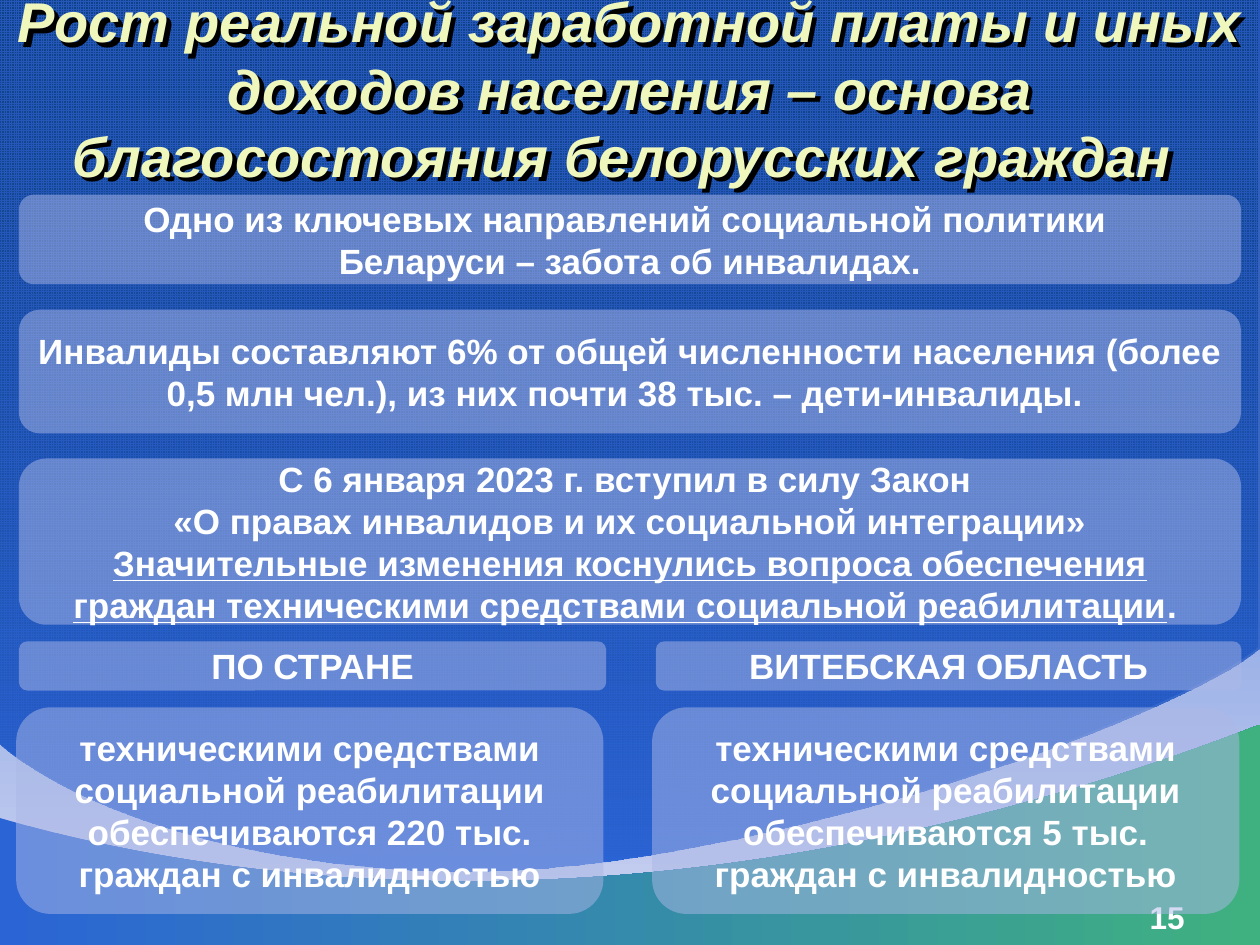
from dataclasses import dataclass

from lxml.etree import SubElement
from pptx import Presentation
from pptx.dml.color import RGBColor
from pptx.enum.dml import MSO_PATTERN
from pptx.enum.shapes import MSO_SHAPE
from pptx.enum.text import MSO_ANCHOR, MSO_AUTO_SIZE, PP_ALIGN
from pptx.oxml.ns import qn
from pptx.util import Pt


@dataclass(frozen=True)
class Theme:
    font: str = "Arial"
    title_size: float = 32
    text_size: float = 20
    number_size: float = 18
    white: str = "FFFFFF"
    title: str = "F0F7BD"
    panel: str = "ACB8E7"
    blue: str = "2B64D5"
    navy: str = "003D7B"
    deep: str = "1F4898"
    green: str = "3FB180"
    pale: str = "CED4F0"
    shadow: str = "000000"


@dataclass(frozen=True)
class Panel:
    left: float
    top: float
    width: float
    height: float
    paragraphs: tuple[str, ...]
    underlined: int | None = None


THEME = Theme()
WIDTH, HEIGHT = 720, 540
LEFT, FULL, HALF = 10.8, 698.4, 335.6
AIDS = ("техническими средствами социальной реабилитации "
        "обеспечиваются {} тыс. граждан с инвалидностью")
TITLE = ("Рост реальной заработной платы и иных доходов населения – основа "
         "благосостояния белорусских граждан ")
PANELS = [
    Panel(LEFT, 111.3, FULL, 51.1, (
        "Одно из ключевых направлений социальной политики \n"
        "Беларуси – забота об инвалидах.",)),
    Panel(LEFT, 177, FULL, 70.6, (
        "Инвалиды составляют 6% от общей численности населения (более "
        "0,5 млн чел.), из них почти 38 тыс. – дети-инвалиды. ",)),
    Panel(LEFT, 262, FULL, 95, (
        "С 6 января 2023 г. вступил в силу Закон \n"
        "«О правах инвалидов и их социальной интеграции»",
        "Значительные изменения коснулись вопроса обеспечения граждан "
        "техническими средствами социальной реабилитации. "), underlined=1),
    Panel(LEFT, 366.5, HALF, 28.1, ("ПО СТРАНЕ",)),
    Panel(374.8, 366.5, 334.6, 28.1, ("ВИТЕБСКАЯ ОБЛАСТЬ",)),
    Panel(9.2, 404.2, HALF, 118.1, (AIDS.format(220),)),
    Panel(372.6, 404.2, HALF, 118.1, (AIDS.format(5),)),
]
# Each wave is a start point followed by the control points of two cubic curves.
UPPER_WAVE = [(0, 424.8), (8.6, 433.4), (80.6, 490.3), (247, 497.5),
              (414, 504.7), (674, 410.4), (720, 370.1)]
LOWER_WAVE = [(-0.7, 467.3), (7.9, 469.4), (92.9, 496.8), (219.6, 502.6),
              (346.3, 508.3), (519.8, 491.8), (720, 414)]


def color(value: str) -> RGBColor:
    return RGBColor.from_string(value)


def set_alpha(element, percent: int) -> None:
    """Make the first colour inside the element partly transparent."""
    first = next(element.iter(qn("a:srgbClr")))
    SubElement(first, qn("a:alpha")).set("val", str(percent * 1000))


def fill_gradient(fill, start: str, end: str, angle: int) -> None:
    fill.gradient()
    fill.gradient_angle = angle
    for stop, position, value in zip(fill.gradient_stops, (0, 1), (start, end)):
        stop.position = position
        stop.color.rgb = color(value)


def format_span(span, size: float, value: str, **extra) -> None:
    formats = {"name": THEME.font, "size": Pt(size), "bold": True, **extra}
    for name, setting in formats.items():
        setattr(span.font, name, setting)
    span.font.color.rgb = color(value)


def curve_lines(shape, count: int) -> None:
    """Turn the first lines of the outline, three at a time, into cubic curves."""
    lines = list(shape._element.iter(qn("a:lnTo")))[:count]
    for first in range(0, count, 3):
        group = lines[first:first + 3]
        curve = group[0].makeelement(qn("a:cubicBezTo"))
        group[0].addprevious(curve)
        for line in group:
            curve.append(line[0])
            line.getparent().remove(line)


def add_wave(page, wave, edge: float, shift: float = 0):
    """Draw the area between a wave and a horizontal slide edge."""
    outline = wave + [(WIDTH, edge), (wave[0][0], edge)]
    points = [(Pt(x + shift), Pt(y + shift)) for x, y in outline]
    builder = page.shapes.build_freeform(*points[0])
    builder.add_line_segments(points[1:], close=True)
    shape = builder.convert_to_shape()
    curve_lines(shape, len(wave) - 1)
    shape.shadow.inherit = False
    shape.line.fill.background()
    return shape


def add_background(page) -> None:
    fill_gradient(page.background.fill, THEME.blue, THEME.pale, 270)
    grid = add_wave(page, UPPER_WAVE, 0, shift=-0.7).fill
    grid.patterned()
    grid.pattern = MSO_PATTERN.SMALL_GRID
    grid.fore_color.rgb = color(THEME.blue)
    grid.back_color.rgb = color(THEME.navy)
    veil = add_wave(page, UPPER_WAVE, 0)
    fill_gradient(veil.fill, THEME.deep, THEME.blue, 270)
    set_alpha(veil._element.spPr, 46)
    fill_gradient(add_wave(page, LOWER_WAVE, HEIGHT).fill, THEME.blue, THEME.green, 0)


def add_number(page, number: str) -> None:
    box = page.shapes.add_textbox(Pt(516.2), Pt(509.8), Pt(167.8), Pt(19.4))
    box.text_frame.word_wrap = True
    para = box.text_frame.paragraphs[0]
    para.alignment = PP_ALIGN.RIGHT
    span = para.add_run()
    span.text = number
    format_span(span, THEME.number_size, THEME.white)


def add_title(page, text: str) -> None:
    title = page.shapes.title
    places = {"left": 0, "top": 5.8, "width": WIDTH, "height": 88.6}
    for name, length in places.items():
        setattr(title, name, Pt(length))
    frame = title.text_frame
    frame.auto_size = MSO_AUTO_SIZE.NONE
    frame.vertical_anchor = MSO_ANCHOR.MIDDLE
    para = frame.paragraphs[0]
    para.alignment = PP_ALIGN.CENTER
    span = para.add_run()
    span.text = text
    format_span(span, THEME.title_size, THEME.title, italic=True)
    title.fill.background()
    effects = SubElement(title._element.spPr, qn("a:effectLst"))
    shadow = SubElement(effects, qn("a:outerShdw"), dist="45791", dir="2700000")
    SubElement(shadow, qn("a:srgbClr"), val=THEME.shadow)
    page.shapes._spTree.append(title._element)  # in front of the background


def add_panel(page, panel: Panel) -> None:
    box = page.shapes.add_shape(
        MSO_SHAPE.ROUNDED_RECTANGLE,
        *map(Pt, (panel.left, panel.top, panel.width, panel.height)))
    box.shadow.inherit = False
    box.line.fill.background()
    box.fill.solid()
    box.fill.fore_color.rgb = color(THEME.panel)
    set_alpha(box._element.spPr, 50)
    frame = box.text_frame
    frame.word_wrap = True
    frame.vertical_anchor = MSO_ANCHOR.MIDDLE
    for index, text in enumerate(panel.paragraphs):
        para = frame.add_paragraph() if index else frame.paragraphs[0]
        para.alignment = PP_ALIGN.CENTER
        underlined = index == panel.underlined
        parts = (text[:-2], text[-2:]) if underlined else text.split("\n")
        for order, part in enumerate(parts):
            if order and not underlined:
                para.add_line_break()
            span = para.add_run()
            span.text = part
            format_span(span, THEME.text_size, THEME.white,
                        underline=underlined and order == 0)


def main() -> None:
    deck = Presentation()
    deck.slide_width, deck.slide_height = Pt(WIDTH), Pt(HEIGHT)
    page = deck.slides.add_slide(deck.slide_layouts[5])
    add_background(page)
    add_number(page, "15")
    add_title(page, TITLE)
    for panel in PANELS:
        add_panel(page, panel)
    deck.save("out.pptx")


if __name__ == "__main__":
    main()
